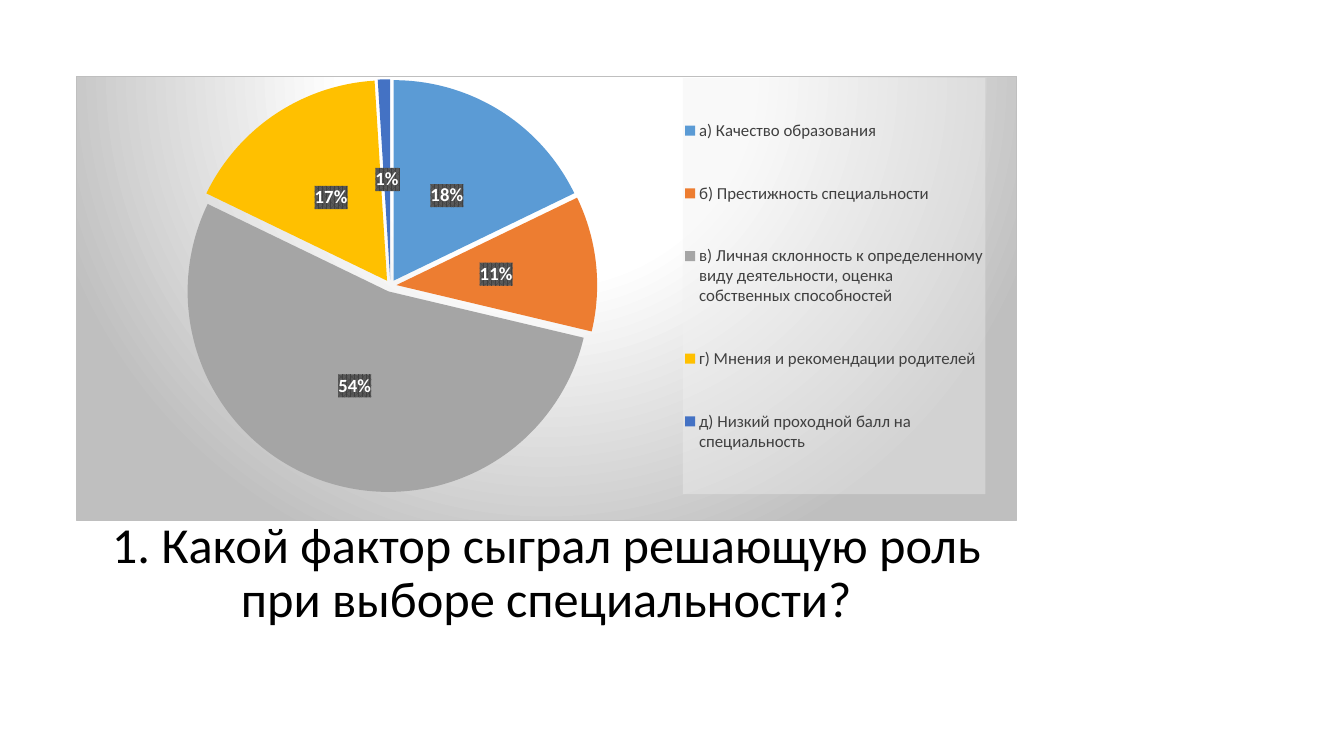
from pptx import Presentation
from pptx.chart.data import CategoryChartData
from pptx.dml.color import RGBColor
from pptx.enum.chart import XL_CHART_TYPE as ChartType
from pptx.enum.chart import XL_LABEL_POSITION as LabelPosition
from pptx.enum.chart import XL_LEGEND_POSITION as LegendPosition
from pptx.enum.text import MSO_ANCHOR as Anchor
from pptx.enum.text import MSO_AUTO_SIZE as AutoSize
from pptx.oxml import parse_xml
from pptx.oxml.ns import nsdecls, qn
from pptx.util import Pt

EMU_PER_PX = 914400 / 100.8
FONT = "Calibri"
BLACK = RGBColor(0x00, 0x00, 0x00)
WHITE = RGBColor(0xFF, 0xFF, 0xFF)
DARK_GRAY = RGBColor(0x40, 0x40, 0x40)
LABEL_GRAY = RGBColor(0x59, 0x59, 0x59)
BORDER_GRAY = RGBColor(0xBF, 0xBF, 0xBF)
LEGEND_GRAY = RGBColor(0xF2, 0xF2, 0xF2)

# Answer, percent of respondents, slice colour
ANSWERS = [
    ("а) Качество образования", 18, RGBColor(0x5B, 0x9B, 0xD5)),
    ("б) Престижность специальности", 11, RGBColor(0xED, 0x7D, 0x31)),
    ("в) Личная склонность к определенному виду деятельности, "
     "оценка собственных способностей", 54, RGBColor(0xA5, 0xA5, 0xA5)),
    ("г) Мнения и рекомендации родителей", 17, RGBColor(0xFF, 0xC0, 0x00)),
    ("д) Низкий проходной балл на специальность", 1, RGBColor(0x44, 0x72, 0xC4)),
]


def box(*lengths):
    return [round(length * EMU_PER_PX) for length in lengths]


def write_text(text_frame, text, *, size, color, line_spacing, anchor):
    text_frame.word_wrap = True
    text_frame.auto_size = AutoSize.NONE
    text_frame.vertical_anchor = anchor
    paragraph = text_frame.paragraphs[0]
    paragraph.line_spacing = line_spacing
    run = paragraph.add_run()
    run.text = text
    run.font.name, run.font.size = FONT, Pt(size)
    run.font.color.rgb = color


presentation = Presentation()
presentation.slide_width, presentation.slide_height = box(1344, 756)
slide = presentation.slides.add_slide(presentation.slide_layouts[5])

# Title below the chart
title = slide.shapes.title
title.left, title.top, title.width, title.height = box(76, 491, 941, 166)
write_text(title.text_frame,
           "1. Какой фактор сыграл решающую роль при выборе специальности?",
           size=36, color=BLACK, line_spacing=0.9, anchor=Anchor.MIDDLE)

# Pie chart
chart_data = CategoryChartData()
chart_data.categories = [answer for answer, _, _ in ANSWERS]
chart_data.add_series("Series 1", [percent for _, percent, _ in ANSWERS])
chart = slide.shapes.add_chart(ChartType.PIE, *box(76, 76, 941, 445), chart_data).chart
chart.has_title = False
chart.font.name, chart.font.size = FONT, Pt(10)
chart.font.color.rgb = BLACK
plot = chart.plots[0]
plot.vary_by_categories = True
series = plot.series[0]
for index, (_, _, color) in enumerate(ANSWERS):
    fill = series.points[index].format.fill
    fill.solid()
    fill.fore_color.rgb = color
series._element.find(qn("c:dPt")).addprevious(
    parse_xml(f'<c:explosion {nsdecls("c")} val="3"/>'))

# Percent labels on a patterned background
labels = series.data_labels
labels.show_value = True
labels.show_percentage = False
labels.number_format = '0"%"'
labels.number_format_is_linked = False
labels.position = LabelPosition.CENTER
labels.font.name, labels.font.size, labels.font.bold = FONT, Pt(13.3), True
labels.font.color.rgb = WHITE
labels._element.find(qn("c:numFmt")).addnext(parse_xml(
    f'<c:spPr {nsdecls("c", "a")}><a:pattFill prst="pct75">'
    f'<a:fgClr><a:srgbClr val="{DARK_GRAY}"/></a:fgClr>'
    f'<a:bgClr><a:srgbClr val="{LABEL_GRAY}"/></a:bgClr>'
    '</a:pattFill></c:spPr>'))

# Legend with a translucent panel
chart.has_legend = True
legend = chart.legend
legend.position = LegendPosition.RIGHT
legend.include_in_layout = False
legend.font.name, legend.font.size = FONT, Pt(12)
legend.font.color.rgb = DARK_GRAY
legend._element.find(qn("c:overlay")).addnext(parse_xml(
    f'<c:spPr {nsdecls("c", "a")}><a:solidFill><a:srgbClr val="{LEGEND_GRAY}">'
    '<a:alpha val="39000"/></a:srgbClr></a:solidFill></c:spPr>'))

# Places of the pie and the legend, as fractions of the chart
chart_element = chart._chartSpace.find(qn("c:chart"))
plot_area = chart_element.find(qn("c:plotArea"))
legend_position = legend._element.find(qn("c:legendPos"))
for parent, index, target, fractions in (
        (plot_area, 0, '<c:layoutTarget val="inner"/>', (0.114, 0.006, 0.44, 0.931)),
        (legend._element, 1, "", (0.645, 0.003, 0.322, 0.938))):
    for old_layout in parent.findall(qn("c:layout")):
        parent.remove(old_layout)
    sizes = "".join(f'<c:{name} val="{value}"/>' for name, value in zip("xywh", fractions))
    parent.insert(index, parse_xml(
        f'<c:layout {nsdecls("c")}><c:manualLayout>{target}'
        f'<c:xMode val="edge"/><c:yMode val="edge"/>{sizes}'
        '</c:manualLayout></c:layout>'))

# Radial gradient and border of the chart
stops = "".join(f'<a:gs pos="{position * 1000}"><a:srgbClr val="{color}"/></a:gs>'
                for position, color in ((0, WHITE), (39, WHITE), (100, BORDER_GRAY)))
chart_element.addnext(parse_xml(
    f'<c:spPr {nsdecls("c", "a")}><a:gradFill><a:gsLst>{stops}</a:gsLst>'
    '<a:path path="circle"><a:fillToRect l="50000" t="-80000" r="50000" b="180000"/>'
    f'</a:path></a:gradFill><a:ln w="{Pt(0.75)}"><a:solidFill>'
    f'<a:srgbClr val="{BORDER_GRAY}"/></a:solidFill></a:ln></c:spPr>'))

presentation.save("out.pptx")
